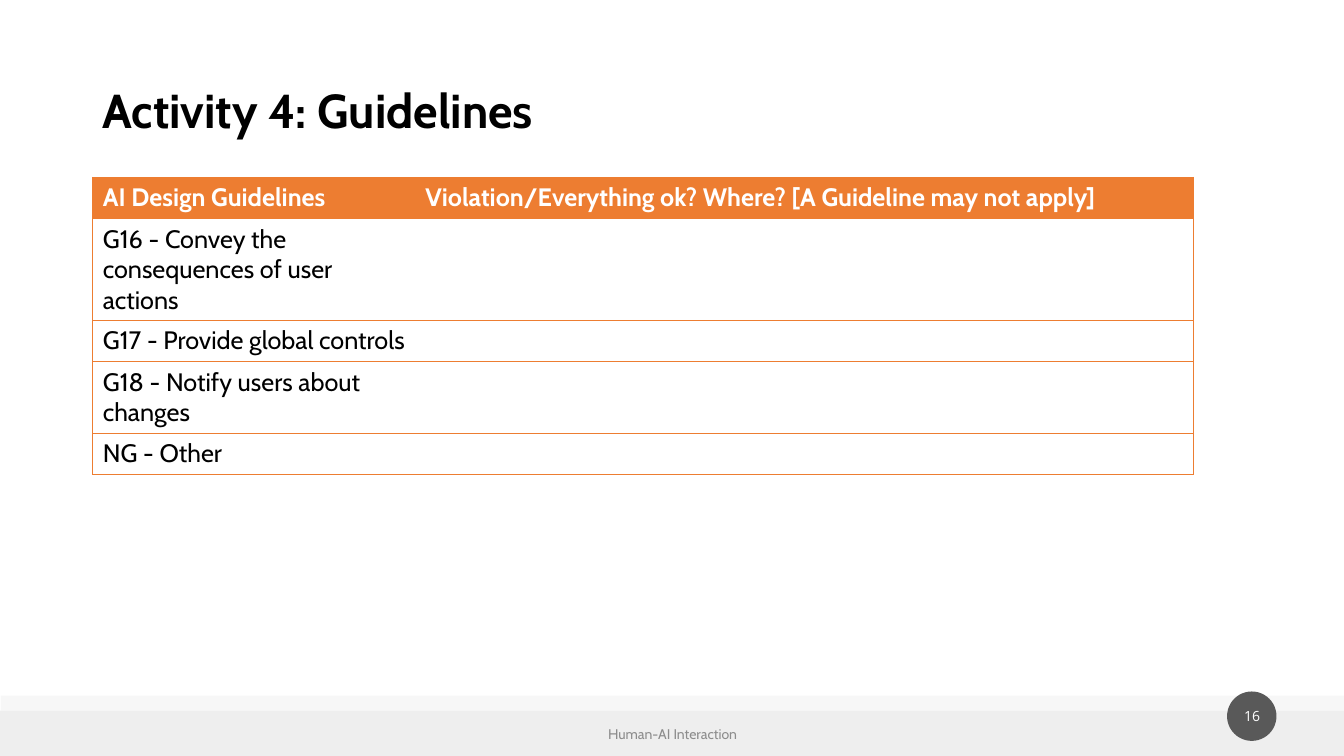
from dataclasses import dataclass
from typing import NamedTuple

from lxml import etree
from pptx import Presentation
from pptx.dml.color import RGBColor
from pptx.enum.shapes import MSO_SHAPE
from pptx.enum.text import MSO_ANCHOR, PP_ALIGN
from pptx.oxml.ns import qn
from pptx.slide import Slide
from pptx.table import _Cell
from pptx.text.text import TextFrame
from pptx.util import Emu, Pt

RECTANGLE = MSO_SHAPE.RECTANGLE
OVAL = MSO_SHAPE.OVAL
MIDDLE = MSO_ANCHOR.MIDDLE
LEFT = PP_ALIGN.LEFT
CENTER = PP_ALIGN.CENTER
EMU_PER_PX = 9144


@dataclass(frozen=True)
class Theme:
    accent: str = "ED7D31"
    white: str = "FFFFFF"
    black: str = "000000"
    band: str = "EEEEEE"
    badge: str = "595959"
    muted: str = "8C8C8C"
    font: str = "Cabin"
    number_font: str = "Open Sans"
    title_size: int = 34
    table_size: int = 18
    small_size: int = 10
    border_width: int = 1


THEME = Theme()


class Box(NamedTuple):
    left: int
    top: int
    width: int
    height: int


class Decoration(NamedTuple):
    kind: MSO_SHAPE
    box: Box
    color: str
    opacity: int = 100


class Label(NamedTuple):
    text: str
    box: Box
    size: int
    color: str
    font: str = THEME.font
    bold: bool = False
    align: PP_ALIGN = CENTER
    line_spacing: float = 1.0


class GuidelineRow(NamedTuple):
    height: int
    texts: tuple[str, ...]


DECORATIONS = (
    Decoration(RECTANGLE, Box(0, 705, 1333, 45), THEME.band),
    Decoration(RECTANGLE, Box(1, 690, 1332, 15), THEME.band, 47),
    Decoration(OVAL, Box(1217, 686, 49, 49), THEME.badge),
)
LABELS = (
    Label("16", Box(1212, 689, 60, 43), THEME.small_size, THEME.white, THEME.number_font),
    Label("Activity 4: Guidelines", Box(92, 40, 1150, 145), THEME.title_size, THEME.black,
          bold=True, align=LEFT, line_spacing=0.9),
    Label("Human-AI Interaction", Box(442, 708, 450, 40), THEME.small_size, THEME.muted),
)
TABLE_LEFT, TABLE_TOP = 92, 176
COLUMN_WIDTHS = (320, 772)
ROWS = (
    GuidelineRow(41, ("AI Design Guidelines",
                      "Violation/Everything ok? Where? [A Guideline may not apply]")),
    GuidelineRow(101, ("G16 - Convey the consequences of user actions", "")),
    GuidelineRow(41, ("G17 - Provide global controls", "")),
    GuidelineRow(71, ("G18 - Notify users about changes", "")),
    GuidelineRow(41, ("NG - Other", "")),
)


def px(length: int) -> Emu:
    return Emu(length * EMU_PER_PX)


def place(box: Box) -> tuple[Emu, ...]:
    return tuple(px(length) for length in box)


def write_text(frame: TextFrame, text: str, *, size: int, color: str, font: str = THEME.font,
               bold: bool = False, align: PP_ALIGN = LEFT, line_spacing: float = 1.0) -> None:
    paragraph = frame.paragraphs[0]
    paragraph.alignment = align
    paragraph.line_spacing = line_spacing
    paragraph.font.size = Pt(size)
    if not text:
        return
    run = paragraph.add_run()
    run.text = text
    run.font.name = font
    run.font.size = Pt(size)
    run.font.bold = bold
    run.font.color.rgb = RGBColor.from_string(color)


def add_decoration(slide: Slide, decoration: Decoration) -> None:
    shape = slide.shapes.add_shape(decoration.kind, *place(decoration.box))
    shape.shadow.inherit = False
    shape.line.fill.background()
    shape.fill.solid()
    shape.fill.fore_color.rgb = RGBColor.from_string(decoration.color)
    if decoration.opacity < 100:
        color = shape.fill._xPr.find(qn("a:solidFill"))[0]
        etree.SubElement(color, qn("a:alpha"), val=str(decoration.opacity * 1000))


def add_label(slide: Slide, label: Label) -> None:
    frame = slide.shapes.add_textbox(*place(label.box)).text_frame
    frame.word_wrap = True
    frame.vertical_anchor = MIDDLE
    write_text(frame, label.text, size=label.size, color=label.color, font=label.font,
               bold=label.bold, align=label.align, line_spacing=label.line_spacing)


def set_borders(cell: _Cell, hidden_side: str) -> None:
    properties = cell._tc.get_or_add_tcPr()
    for position, side in enumerate("LRTB"):
        line = etree.Element(qn(f"a:ln{side}"), w=str(Pt(THEME.border_width)))
        if side == hidden_side:
            etree.SubElement(line, qn("a:noFill"))
        else:
            fill = etree.SubElement(line, qn("a:solidFill"))
            etree.SubElement(fill, qn("a:srgbClr"), val=THEME.accent)
        properties.insert(position, line)


def add_guideline_table(slide: Slide) -> None:
    box = Box(TABLE_LEFT, TABLE_TOP, sum(COLUMN_WIDTHS), sum(row.height for row in ROWS))
    table = slide.shapes.add_table(len(ROWS), len(COLUMN_WIDTHS), *place(box)).table
    table.horz_banding = False
    for column, width in zip(table.columns, COLUMN_WIDTHS):
        column.width = px(width)
    for row_index, row in enumerate(ROWS):
        header = row_index == 0
        table.rows[row_index].height = px(row.height)
        for column_index, text in enumerate(row.texts):
            cell = table.cell(row_index, column_index)
            cell.fill.solid()
            cell.fill.fore_color.rgb = RGBColor.from_string(
                THEME.accent if header else THEME.white)
            write_text(cell.text_frame, text, size=THEME.table_size, bold=header,
                       color=THEME.white if header else THEME.black)
            set_borders(cell, hidden_side="R" if column_index == 0 else "L")


def main() -> None:
    presentation = Presentation()
    presentation.slide_width = px(1333)
    presentation.slide_height = px(750)
    slide = presentation.slides.add_slide(presentation.slide_layouts[6])
    for decoration in DECORATIONS:
        add_decoration(slide, decoration)
    for label in LABELS:
        add_label(slide, label)
    add_guideline_table(slide)
    presentation.save("out.pptx")


if __name__ == "__main__":
    main()
